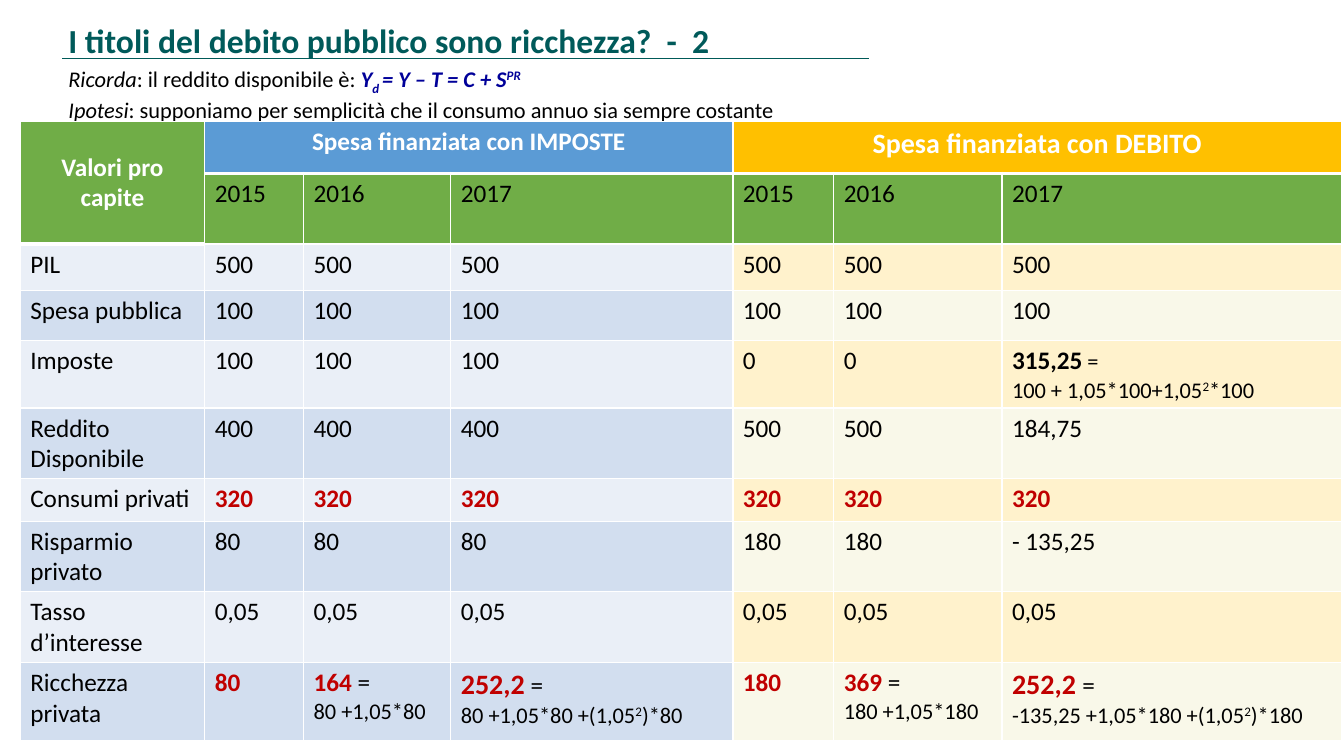
from dataclasses import dataclass

from lxml.etree import SubElement
from pptx import Presentation
from pptx.dml.color import RGBColor
from pptx.enum.shapes import MSO_CONNECTOR
from pptx.enum.text import MSO_ANCHOR, MSO_AUTO_SIZE, PP_ALIGN
from pptx.oxml import parse_xml
from pptx.oxml.ns import nsdecls, qn
from pptx.util import Cm, Pt


@dataclass(frozen=True)
class Style:
    size: float
    color: str = "000000"
    bold: bool = False
    italic: bool = False
    baseline: int = 0


class Theme:
    font = "Calibri"
    rule, border = "005A58", "FFFFFF"
    green, blue, amber = "70AD47", "5B9BD5", "FFC000"
    tax_bands = ("EAEFF7", "D2DEEF")
    debt_bands = ("FFF2CC", "F9F8E9")
    styles = {
        "title": Style(24, "005A5A", bold=True),
        "intro": Style(16),
        "term": Style(16, italic=True),
        "formula": Style(16, "000099", True, True),
        "formula_sub": Style(16, "000099", True, True, -25000),
        "formula_sup": Style(16, "000099", True, True, 30000),
        "head": Style(18, "FFFFFF", bold=True),
        "head_large": Style(20, "FFFFFF", bold=True),
        "body": Style(18),
        "bold": Style(18, bold=True),
        "key": Style(18, "C00000", bold=True),
        "key_large": Style(20, "C00000", bold=True),
        "note": Style(16),
        "note_sup": Style(16, baseline=30000),
    }


# Content: a text is a list of lines, a line a list of (words, style)
HEADING = [
    [("I titoli del debito pubblico sono ricchezza?  -  2", "title")],
    [("Ricorda", "term"), (": il reddito disponibile è: ", "intro"),
     ("Y", "formula"), ("d ", "formula_sub"),
     ("= Y – T = C + S", "formula"), ("PR", "formula_sup")],
    [("Ipotesi", "term"),
     (": supponiamo per semplicità che il consumo annuo sia sempre costante",
      "intro")],
]
# Header blocks: first row, first column, last row, last column, text, fill
HEADERS = [
    (0, 0, 1, 0, [[("Valori pro capite", "head")]], Theme.green),
    (0, 1, 0, 3, [[("Spesa finanziata con IMPOSTE", "head")]], Theme.blue),
    (0, 4, 0, 6, [[("Spesa finanziata con DEBITO", "head_large")]], Theme.amber),
]
YEARS = ["2015", "2016", "2017"]
CONSUMPTION = [[("320", "key")]]
DEBT_TAXES = [
    [("315,25", "bold"), (" =", "note")],
    [("100 + 1,05*100+1,05", "note"), ("2", "note_sup"), ("*100", "note")],
]
WEALTH = [
    [[("80", "key")]],
    [[("164", "key"), (" =", "body")], [("80 +1,05*80", "note")]],
    [[("252,2", "key_large"), (" =", "body")],
     [("80 +1,05*80 +(1,05", "note"), ("2", "note_sup"), (")*80", "note")]],
    [[("180", "key")]],
    [[("369", "key"), (" =", "body")], [("180 +1,05*180", "note")]],
    [[("252,2 ", "key_large"), ("=", "body")],
     [("-135,25 +1,05*180 +(1,05", "note"), ("2", "note_sup"),
      (")*180", "note")]],
]
ROWS = [
    ["PIL"] + ["500"] * 6,
    ["Spesa pubblica"] + ["100"] * 6,
    ["Imposte", "100", "100", "100", "0", "0", DEBT_TAXES],
    ["Reddito Disponibile", "400", "400", "400", "500", "500", "184,75"],
    ["Consumi privati"] + [CONSUMPTION] * 6,
    ["Risparmio privato", "80", "80", "80", "180", "180", "- 135,25"],
    ["Tasso d’interesse"] + ["0,05"] * 6,
    ["Ricchezza privata"] + WEALTH,
]
COLUMN_CM = [4.65, 2.49, 3.71, 7.11, 2.54, 4.24, 8.56]
ROW_CM = [1.3, 0.76, 1.17, 1.27, 1.5, 1.73, 1.07, 1.73, 1.73, 1.98]
FIRST_DEBT_COLUMN = 4


def write(frame, lines, align=PP_ALIGN.LEFT):
    for index, line in enumerate(lines):
        paragraph = frame.paragraphs[0] if index == 0 else frame.add_paragraph()
        paragraph.alignment = align
        for words, name in line:
            style = Theme.styles[name]
            run = paragraph.add_run()
            run.text = words
            run.font.name = Theme.font
            run.font.size = Pt(style.size)
            run.font.bold, run.font.italic = style.bold, style.italic
            run.font.color.rgb = RGBColor.from_string(style.color)
            if style.baseline:
                run.font._element.set("baseline", str(style.baseline))


def paint(cell, color):
    cell.fill.solid()
    cell.fill.fore_color.rgb = RGBColor.from_string(color)


def edge_width(row, column):
    """Width of the border below a cell: thick under the top headers."""
    return 3 if row == (1 if column == 0 else 0) else 1


def add_borders(cell, row, column):
    widths = {"lnL": 1, "lnR": 1, "lnT": edge_width(row - 1, column),
              "lnB": edge_width(row, column)}
    properties = cell._tc.get_or_add_tcPr()
    for position, (side, width) in enumerate(widths.items()):
        properties.insert(position, parse_xml(
            f'<a:{side} {nsdecls("a")} w="{Pt(width)}"><a:solidFill>'
            f'<a:srgbClr val="{Theme.border}"/></a:solidFill></a:{side}>'))


def add_heading(slide):
    # Rule under the title
    rule = slide.shapes.add_connector(
        MSO_CONNECTOR.STRAIGHT, Cm(1.57), Cm(1.47), Cm(21.89), Cm(1.47))
    rule.line.color.rgb = RGBColor.from_string(Theme.rule)
    rule.line.width = Pt(0.5)
    SubElement(rule._element.spPr, qn("a:effectLst"))

    # Title with its two introductory lines, kept clear of the table
    title = slide.shapes.title
    title.left, title.top = Cm(1.47), Cm(0.38)
    title.width, title.height = Cm(32.4), Cm(2.79)
    frame = title.text_frame
    frame.word_wrap = True
    frame.auto_size = MSO_AUTO_SIZE.SHAPE_TO_FIT_TEXT
    frame.vertical_anchor = MSO_ANCHOR.TOP
    write(frame, HEADING)
    _, reminder, assumption = frame.paragraphs
    reminder.line_spacing, reminder.space_before = 1.05, Pt(2.4)
    assumption.line_spacing, assumption.space_before = 1.0, Pt(0)


def add_comparison(slide):
    comparison = slide.shapes.add_table(
        len(ROW_CM), len(COLUMN_CM), Cm(0.51), Cm(3.07),
        Cm(sum(COLUMN_CM)), Cm(sum(ROW_CM))).table
    comparison.first_row = comparison.horz_banding = False
    for column, width in zip(comparison.columns, COLUMN_CM):
        column.width = Cm(width)
    for row, height in zip(comparison.rows, ROW_CM):
        row.height = Cm(height)

    # Merged headers
    for top, left, bottom, right, text, color in HEADERS:
        header = comparison.cell(top, left)
        header.merge(comparison.cell(bottom, right))
        write(header.text_frame, text, PP_ALIGN.CENTER)
        for row in range(top, bottom + 1):
            for column in range(left, right + 1):
                paint(comparison.cell(row, column), color)
    comparison.cell(0, 0).vertical_anchor = MSO_ANCHOR.MIDDLE

    # Years and figures
    for row, values in enumerate([[None] + YEARS * 2] + ROWS, start=1):
        for column, value in enumerate(values):
            if value is None:
                continue
            cell = comparison.cell(row, column)
            lines = [[(value, "body")]] if isinstance(value, str) else value
            write(cell.text_frame, lines)
            bands = (Theme.debt_bands if column >= FIRST_DEBT_COLUMN
                     else Theme.tax_bands)
            paint(cell, Theme.green if row == 1 else bands[row % 2])

    # Borders
    for row in range(len(ROW_CM)):
        for column in range(len(COLUMN_CM)):
            add_borders(comparison.cell(row, column), row, column)


def main():
    deck = Presentation()
    deck.slide_width, deck.slide_height = Cm(33.87), Cm(19.05)
    slide = deck.slides.add_slide(deck.slide_layouts[5])
    add_heading(slide)
    add_comparison(slide)
    deck.save("out.pptx")


if __name__ == "__main__":
    main()
